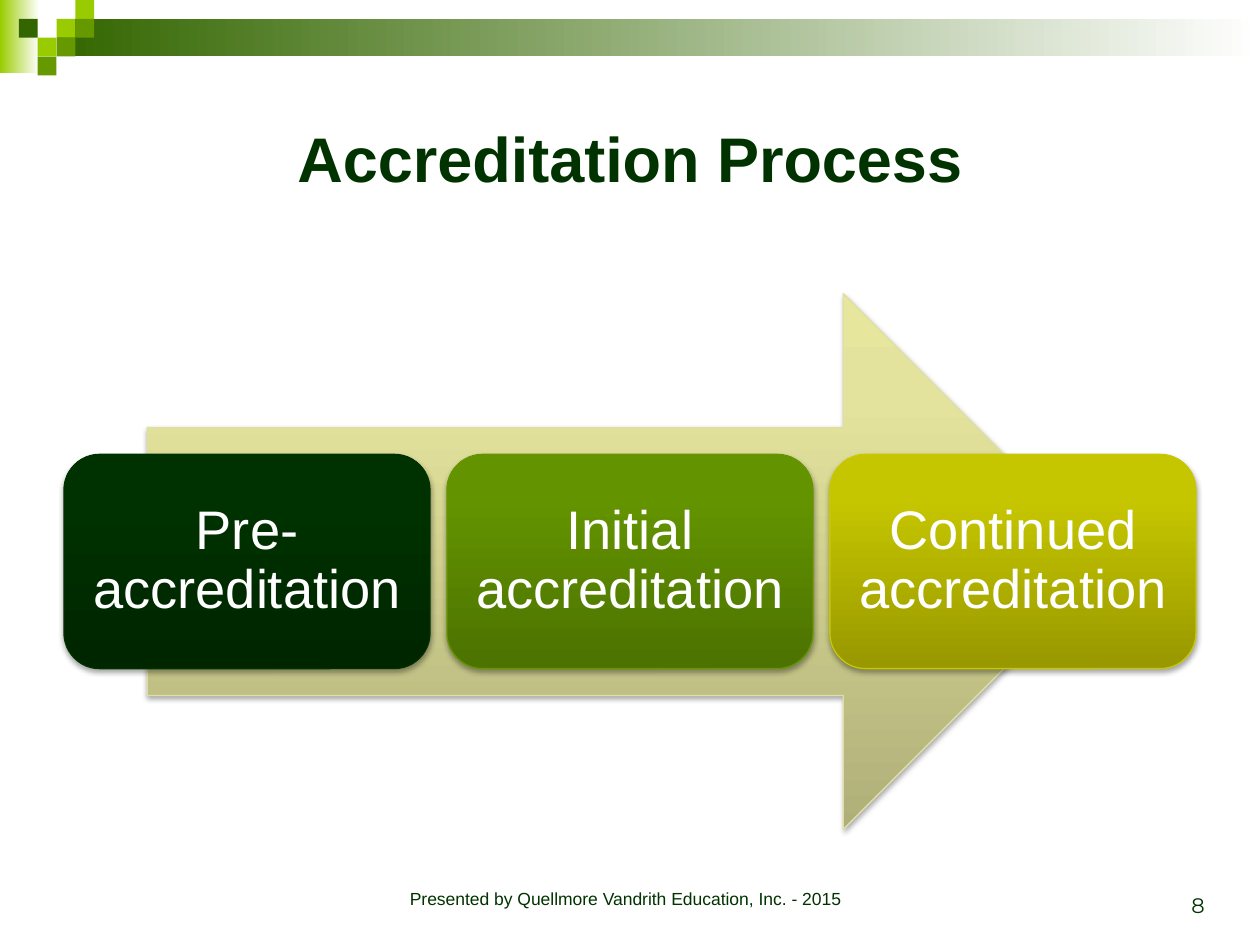
from lxml import etree
from pptx import Presentation
from pptx.dml.color import RGBColor
from pptx.enum import shapes, text
from pptx.oxml import ns
from pptx.util import Cm, Pt

MSO = shapes.MSO_SHAPE
AL = text.PP_ALIGN
ANCHOR = text.MSO_ANCHOR
DARK = "003300"
UNIT = 0.38  # side of a header square, cm
SQUARES = [(3, 1, "99CC00"), (4, 0, "99CC00"), (4, 1, "669900"), (2, 2, "99CC00"),
           (1, 1, "336600"), (3, 2, "669900"), (2, 3, "669900")]
STAGES = [("Pre-accreditation", ["002600", "003100", "003200"], "003200"),
          ("Initial accreditation", ["4C7200", "639400", "639500"], "649600"),
          ("Continued accreditation", ["989800", "C6C600", "C7C700"], "C8C800")]


def rgb(color):
    return RGBColor.from_string(color)


def sub(parent, tag, **attrs):
    return etree.SubElement(parent, ns.qn(tag), {k: str(v) for k, v in attrs.items()})


def set_gradient(sp, stops, angle):
    """Fill with (percent, colour) stops; the angle is clockwise degrees."""
    sp.fill.gradient()
    grad = sp._element.spPr.find(ns.qn("a:gradFill"))
    for child in list(grad):
        grad.remove(child)
    gs_list = sub(grad, "a:gsLst")
    for pos, color in stops:
        sub(sub(gs_list, "a:gs", pos=pos * 1000), "a:srgbClr", val=color)
    sub(grad, "a:lin", ang=angle * 60000, scaled=0)


def add_soft_shadow(sp):
    effects = sp._element.spPr.find(ns.qn("a:effectLst"))
    shadow = sub(effects, "a:outerShdw", blurRad=Pt(3.1), dist=Pt(1.8),
                 dir=90 * 60000, rotWithShape=0)
    sub(sub(shadow, "a:srgbClr", val="000000"), "a:alpha", val=35000)


def add_shape(s, kind, box, color=None):
    sp = s.shapes.add_shape(kind, *map(Cm, box))
    sp.shadow.inherit = False
    sp.line.fill.background()
    if color:
        sp.fill.solid()
        sp.fill.fore_color.rgb = rgb(color)
    return sp


def add_glossy_shape(s, kind, box, colors, line):
    sp = add_shape(s, kind, box)
    set_gradient(sp, zip((0, 80, 100), colors), 270)
    sp.line.color.rgb = rgb(line)
    sp.line.width = Pt(0.75)
    add_soft_shadow(sp)
    return sp


def write(sp, words, size, color=DARK, font="Arial", bold=False, align=AL.CENTER,
          anchor=ANCHOR.TOP, spacing=None, inset=None):
    tf = sp.text_frame
    tf.word_wrap = True
    tf.auto_size = text.MSO_AUTO_SIZE.NONE
    tf.vertical_anchor = anchor
    if inset is not None:
        tf.margin_left = tf.margin_right = tf.margin_top = tf.margin_bottom = Cm(inset)
    p = tf.paragraphs[0]
    p.alignment = align
    p.line_spacing = spacing
    r = p.add_run()
    r.text = words
    r.font.name, r.font.size, r.font.bold = font, Pt(size), bold
    r.font.color.rgb = rgb(color)


def add_text(s, box, words, size, **fmt):
    write(s.shapes.add_textbox(*map(Cm, box)), words, size, **fmt)


def add_header(s):
    for box, color in [((0, 0, 0.79, 1.47), "99CC00"),
                       ((3 * UNIT, UNIT, 24.26, 0.76), "336600")]:
        set_gradient(add_shape(s, MSO.RECTANGLE, box), [(0, color), (100, "FFFFFF")], 0)
    for col, row, color in SQUARES:
        add_shape(s, MSO.RECTANGLE, (col * UNIT, row * UNIT, UNIT, UNIT), color)


def add_title(s, words):
    title = s.shapes.title
    title.left, title.top, title.width, title.height = map(Cm, (1.27, 1.27, 22.86, 3.81))
    write(title, words, 36, bold=True, anchor=ANCHOR.MIDDLE)


def add_process(s):
    add_glossy_shape(s, MSO.RIGHT_ARROW, (2.97, 5.92, 19.43, 10.8),
                     ["AFAF79", "E3E39D", "E6E69C"], "DEDEA5")
    left, width, gap = 1.29, 7.38, 0.34
    for i, (words, colors, line) in enumerate(STAGES):
        box = (left + i * (width + gap), 9.16, width, 4.32)
        sp = add_glossy_shape(s, MSO.ROUNDED_RECTANGLE, box, colors, line)
        write(sp, words, 31, color="FFFFFF", anchor=ANCHOR.MIDDLE, spacing=0.9, inset=0.3)


def main():
    prs = Presentation()
    prs.slide_width, prs.slide_height = Cm(25.4), Cm(19.05)
    s = prs.slides.add_slide(prs.slide_layouts[5])
    add_header(s)
    add_title(s, "Accreditation Process")
    add_process(s)
    add_text(s, (6.99, 17.78, 11.23, 0.84),
             "Presented by Quellmore Vandrith Education, Inc. - 2015", 10)
    add_text(s, (18.62, 17.35, 5.92, 1.27), "8", 12, font="Montserrat",
             align=AL.RIGHT, anchor=ANCHOR.BOTTOM)
    prs.save("out.pptx")


if __name__ == "__main__":
    main()
